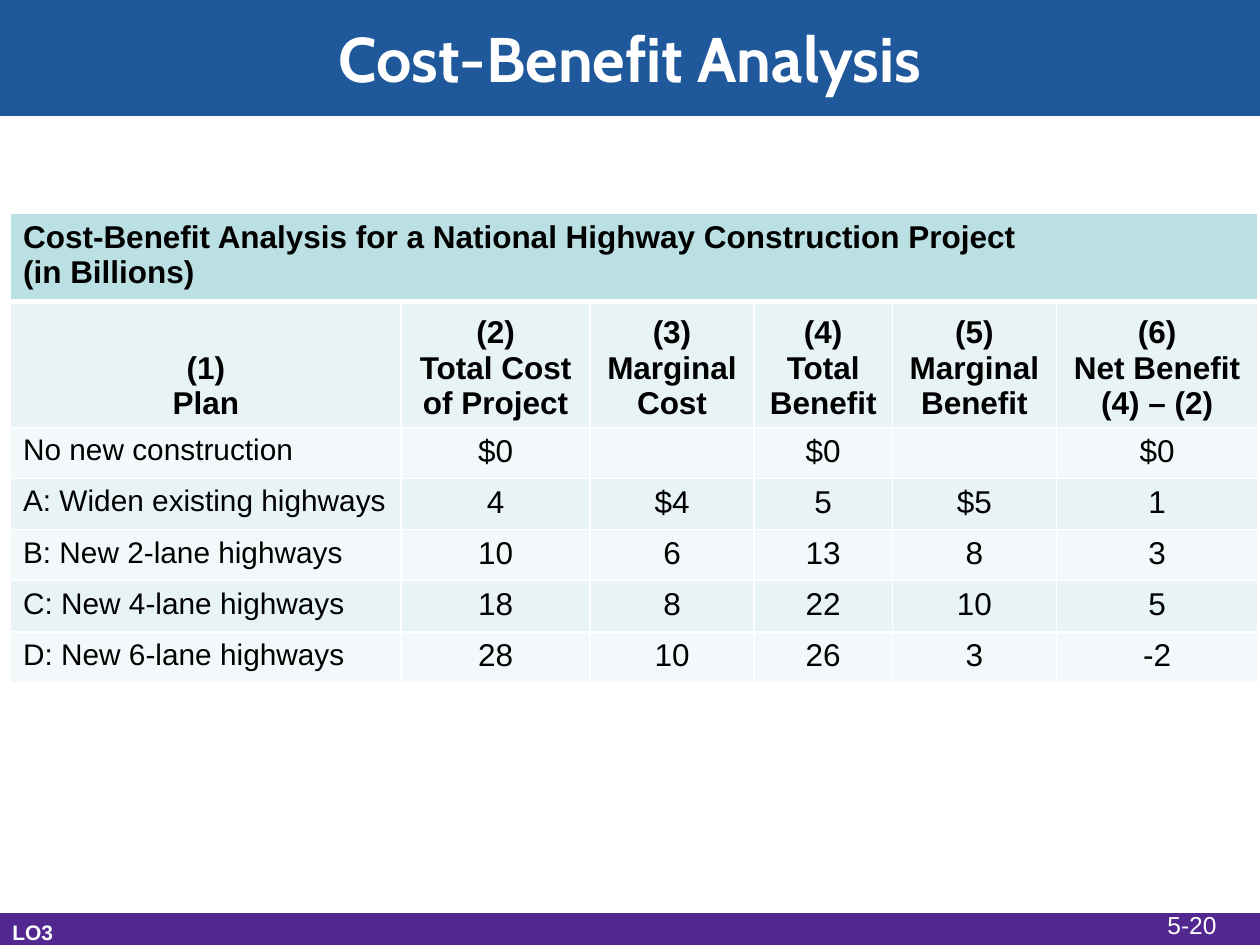
from lxml.etree import SubElement
from pptx import Presentation
from pptx.dml.color import RGBColor
from pptx.enum.shapes import MSO_SHAPE
from pptx.enum.text import MSO_ANCHOR as ANCHOR, PP_ALIGN as ALIGN
from pptx.oxml.ns import qn
from pptx.util import Pt

COLORS = {
    "blue": "20589C", "purple": "522890", "white": "FFFFFF", "black": "000000",
    "caption": "BBE0E3", "dark_band": "E7F3F4", "light_band": "F3F9FA",
}
CAPTION = "Cost-Benefit Analysis for a National Highway Construction Project\n(in Billions)"
HEADERS = [
    "(1)\nPlan", "(2)\nTotal Cost of Project", "(3)\nMarginal Cost",
    "(4)\nTotal Benefit", "(5)\nMarginal Benefit", "(6)\nNet Benefit\n(4) – (2)",
]
PLANS = [
    ["No new construction", "$0", "", "$0", "", "$0"],
    ["A: Widen existing highways", "4", "$4", "5", "$5", "1"],
    ["B: New 2-lane highways", "10", "6", "13", "8", "3"],
    ["C: New 4-lane highways", "18", "8", "22", "10", "5"],
    ["D: New 6-lane highways", "28", "10", "26", "3", "-2"],
]
COL_WIDTHS = [223.2, 108, 93.6, 79.2, 93.6, 115.2]
ROW_HEIGHTS = [50.4, 72] + [29.2] * len(PLANS)


def rgb(name):
    return RGBColor.from_string(COLORS[name])


class SlideBuilder:
    def __init__(self, slide, font="Arial"):
        self.slide = slide
        self.font = font

    def set_text(self, tf, text, size, color, bold=False, align=ALIGN.LEFT, font=None):
        """Fill a text frame, one paragraph for each line of text."""
        tf.text = text
        for p in tf.paragraphs:
            p.alignment = align
            p.font.name = font or self.font
            p.font.size = Pt(size)
            p.font.bold = bold
            p.font.color.rgb = rgb(color)

    def bar(self, top, height, color):
        sp = self.slide.shapes.add_shape(
            MSO_SHAPE.RECTANGLE, 0, Pt(top), Pt(720), Pt(height))
        sp.shadow.inherit = False
        sp.fill.solid()
        sp.fill.fore_color.rgb = rgb(color)
        sp.line.color.rgb = rgb(color)
        sp.line.width = Pt(0.75)
        return sp

    def label(self, left, top, width, height, text, size, bold=False):
        tb = self.slide.shapes.add_textbox(Pt(left), Pt(top), Pt(width), Pt(height))
        tb.text_frame.word_wrap = False
        self.set_text(tb.text_frame, text, size, "white", bold)

    def borders(self, cell, **widths):
        """Draw white edges; widths are given by side: L, R, T, B."""
        tc_pr = cell._tc.get_or_add_tcPr()
        for i, side in enumerate("LRTB"):
            ln = tc_pr.makeelement(qn(f"a:ln{side}"), {"w": str(Pt(widths.get(side, 1)))})
            fill = SubElement(ln, qn("a:solidFill"))
            SubElement(fill, qn("a:srgbClr"), val=COLORS["white"])
            tc_pr.insert(i, ln)

    def cell(self, cell, text, fill, size=18, bold=False, align=ALIGN.CENTER,
             anchor=ANCHOR.TOP, **widths):
        self.set_text(cell.text_frame, text, size, "black", bold, align)
        cell.vertical_anchor = anchor
        cell.fill.solid()
        cell.fill.fore_color.rgb = rgb(fill)
        self.borders(cell, **widths)

    def table(self, left, top):
        table = self.slide.shapes.add_table(
            len(ROW_HEIGHTS), len(COL_WIDTHS), Pt(left), Pt(top),
            Pt(sum(COL_WIDTHS)), Pt(sum(ROW_HEIGHTS))).table
        for col, width in zip(table.columns, COL_WIDTHS):
            col.width = Pt(width)
        for row, height in zip(table.rows, ROW_HEIGHTS):
            row.height = Pt(height)

        caption = table.cell(0, 0)
        caption.merge(table.cell(0, len(COL_WIDTHS) - 1))
        self.cell(caption, CAPTION, "caption", bold=True, align=ALIGN.LEFT, B=3)
        for c, text in enumerate(HEADERS):
            self.cell(table.cell(1, c), text, "dark_band", bold=True,
                      anchor=ANCHOR.BOTTOM, T=3)
        for r, plan in enumerate(PLANS):
            band = "dark_band" if r % 2 else "light_band"
            for c, text in enumerate(plan):
                style = {} if c else {"size": 17, "align": ALIGN.LEFT}
                self.cell(table.cell(r + 2, c), text, band, **style)


def main():
    prs = Presentation()
    prs.slide_width, prs.slide_height = Pt(720), Pt(540)
    s = SlideBuilder(prs.slides.add_slide(prs.slide_layouts[6]))

    title = s.bar(0, 66, "blue")
    title.text_frame.vertical_anchor = ANCHOR.MIDDLE
    s.set_text(title.text_frame, "Cost-Benefit Analysis", 36, "white", True,
               ALIGN.CENTER, "Cabin")
    s.bar(522, 18, "purple")
    s.label(0, 522, 38, 21.6, "LO3", 12, bold=True)
    s.table(6, 121.8)
    s.label(660, 516.5, 42.5, 24, "5-20", 14)

    prs.save("out.pptx")


if __name__ == "__main__":
    main()
